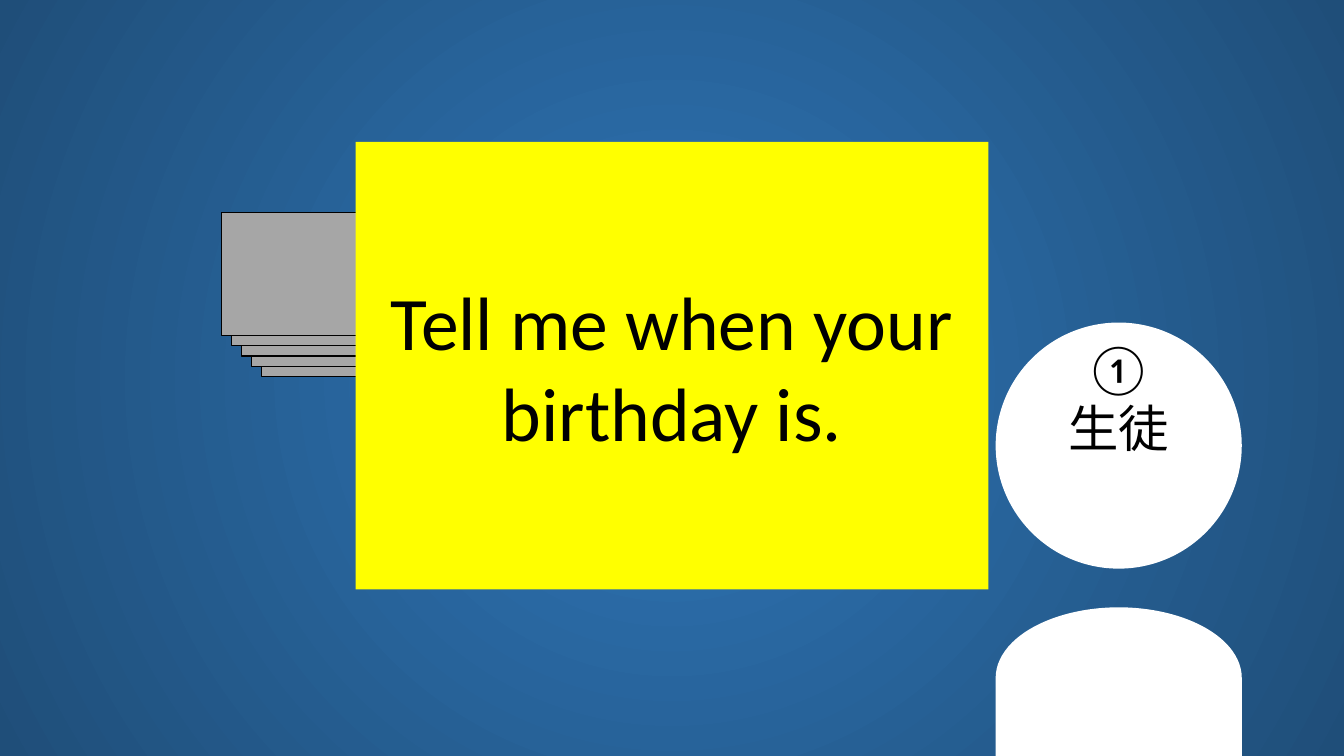
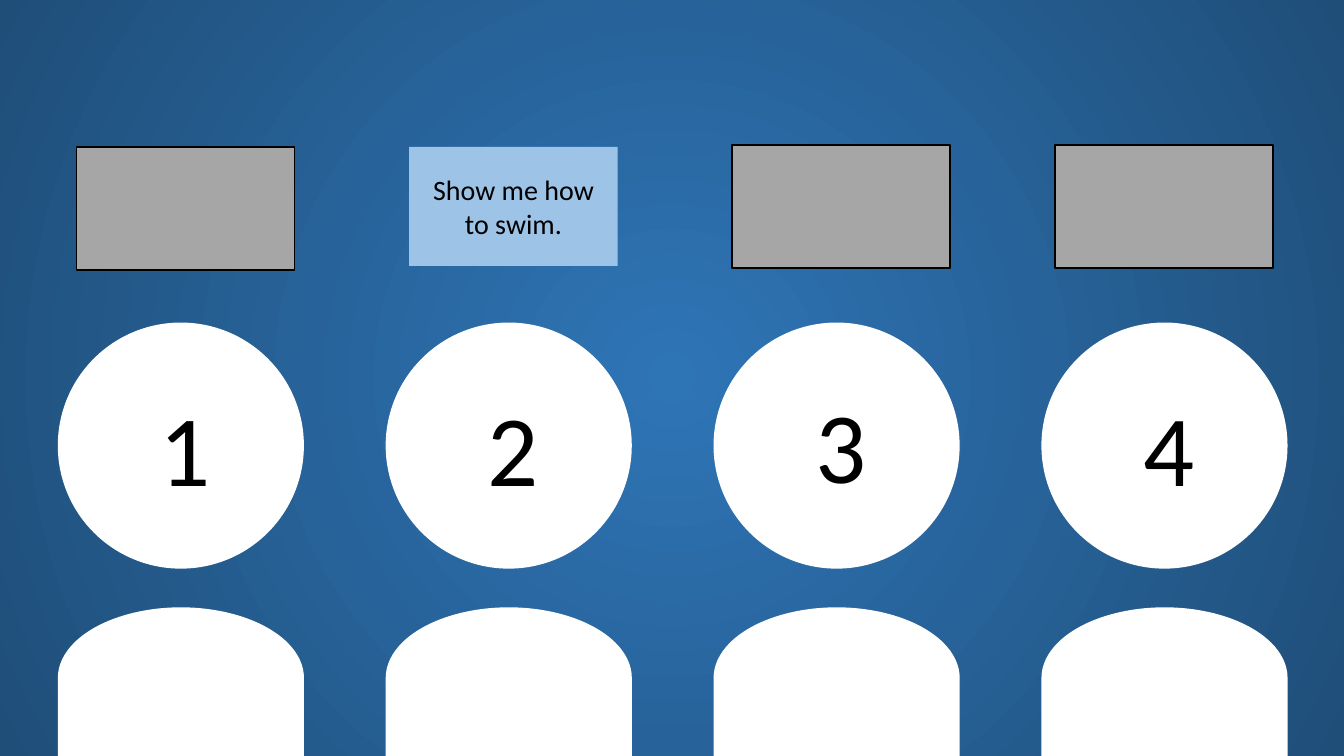
"""Build two slides of a classroom card game with players and prompt cards."""
import dataclasses

import pptx
import pptx.dml.color
import pptx.enum.shapes
import pptx.enum.text
import pptx.oxml
import pptx.oxml.ns
import pptx.util

Pt = pptx.util.Pt
Shape = pptx.enum.shapes.MSO_SHAPE


@dataclasses.dataclass(frozen=True)
class Theme:
    font: str = "Calibri"
    ink: str = "000000"
    player: str = "FFFFFF"
    card_back: str = "A6A6A6"
    yellow: str = "FFFF00"
    light_blue: str = "9DC3E6"
    backdrop: tuple = ("2E75B6", "1F4E79")
    prompt_size: int = 54
    small_prompt_size: int = 20
    name_size: int = 36
    number_size: int = 72


def color(value):
    return pptx.dml.color.RGBColor.from_string(value)


class GameDeck:
    HEAD = 175.8
    HEAD_TOP = 230.4
    BODY_TOP = 433.8
    BODY_LENGTH = 313.2
    CARD = (155.6, 87.8)

    def __init__(self, theme):
        self.theme = theme
        self.deck = pptx.Presentation()
        self.deck.slide_width, self.deck.slide_height = Pt(960), Pt(540)
        self.page = None
        self.paint_backdrop()

    def paint_backdrop(self):
        master = self.deck.slide_master
        fill = master.background.fill
        fill.gradient()
        for stop, value in zip(fill.gradient_stops, self.theme.backdrop):
            stop.color.rgb = color(value)
        gradient = master.element.find(".//" + pptx.oxml.ns.qn("p:bgPr")).find(
            pptx.oxml.ns.qn("a:gradFill"))
        circle = pptx.oxml.parse_xml(
            f'<a:path {pptx.oxml.ns.nsdecls("a")} path="circle">'
            '<a:fillToRect l="50000" t="50000" r="50000" b="50000"/></a:path>')
        gradient.replace(gradient.find(pptx.oxml.ns.qn("a:lin")), circle)

    def add_page(self):
        self.page = self.deck.slides.add_slide(self.deck.slide_layouts[6])

    def shape(self, kind, left, top, width, height, fill, line=None):
        shape = self.page.shapes.add_shape(
            kind, Pt(left), Pt(top), Pt(width), Pt(height))
        shape.shadow.inherit = False
        shape.fill.solid()
        shape.fill.fore_color.rgb = color(fill)
        if line:
            shape.line.color.rgb = color(line)
            shape.line.width = Pt(1)
        else:
            shape.line.fill.background()
        return shape

    def set_text(self, box, text, size):
        frame = box.text_frame
        frame.word_wrap = True
        frame.text = text
        for para in frame.paragraphs:
            para.alignment = pptx.enum.text.PP_ALIGN.CENTER
            for span in para.runs:
                span.font.name = self.theme.font
                span.font.size = Pt(size)
                span.font.color.rgb = color(self.theme.ink)

    def label(self, left, top, width, height, text, size):
        box = self.page.shapes.add_textbox(
            Pt(left), Pt(top), Pt(width), Pt(height))
        self.set_text(box, text, size)

    def player(self, left):
        self.shape(Shape.OVAL, left, self.HEAD_TOP, self.HEAD, self.HEAD,
                   self.theme.player)
        shift = (self.BODY_LENGTH - self.HEAD) / 2
        body = self.shape(Shape.FLOWCHART_TERMINATOR, left - shift,
                          self.BODY_TOP + shift, self.BODY_LENGTH, self.HEAD,
                          self.theme.player)
        body.rotation = 90

    def face_down_card(self, left, top):
        self.shape(Shape.RECTANGLE, left, top, *self.CARD,
                   self.theme.card_back, self.theme.ink)

    def prompt_card(self, left, top, width, height, fill, text, size):
        card = self.shape(Shape.RECTANGLE, left, top, width, height, fill)
        card.text_frame.vertical_anchor = pptx.enum.text.MSO_ANCHOR.MIDDLE
        self.set_text(card, text, size)


def build_turn_page(game):
    theme = game.theme
    game.add_page()
    for depth in reversed(range(5)):
        game.face_down_card(158.2 + 7.1 * depth, 151.7 + 7.4 * depth)
    game.prompt_card(254, 101.4, 452, 319.7, theme.yellow,
                     "Tell me when your birthday is.", theme.prompt_size)
    game.player(711.2)
    game.label(734.4, 236.9, 129.6, 94.3, "①\n生徒", theme.name_size)


def build_players_page(game):
    theme = game.theme
    game.add_page()
    first_left, pitch = 41.3, 234.2
    for index, number_top in enumerate((272, 272, 270, 272)):
        left = first_left + pitch * index
        game.player(left)
        game.label(left + 46, number_top, 90, 94.3,
                   str(index + 1), theme.number_size)
    game.prompt_card(292.3, 105, 149, 85, theme.light_blue,
                     "Show me how to swim.", theme.small_prompt_size)
    for left, top in ((54.7, 105), (522.9, 103.6), (753.6, 103.6)):
        game.face_down_card(left, top)


def main():
    game = GameDeck(Theme())
    build_turn_page(game)
    build_players_page(game)
    game.deck.save("out.pptx")


if __name__ == "__main__":
    main()
